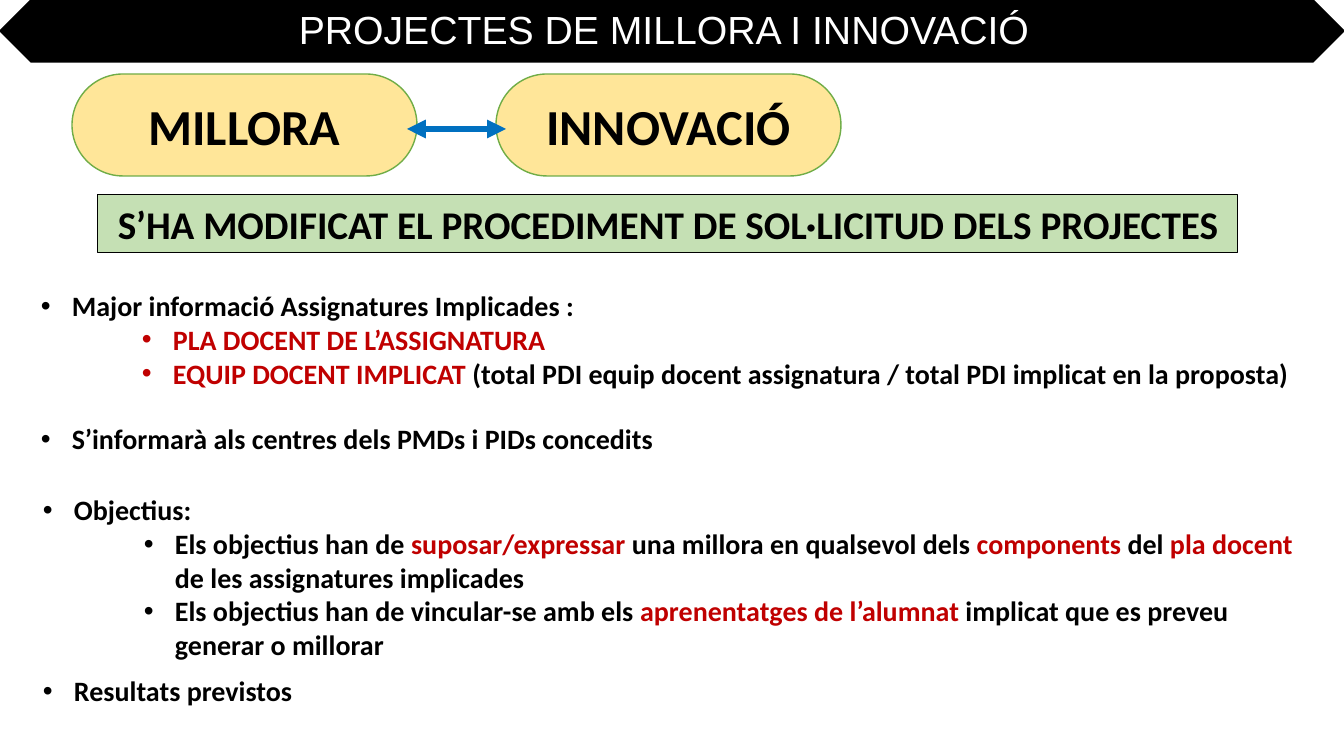
from lxml.etree import SubElement
from pptx import Presentation
from pptx.dml.color import RGBColor
from pptx.enum.shapes import MSO_CONNECTOR, MSO_SHAPE
from pptx.enum.text import MSO_ANCHOR, PP_ALIGN
from pptx.oxml.ns import qn
from pptx.util import Pt

PX = 914400 / 100.8
THEME = {
    "black": RGBColor(0x00, 0x00, 0x00),
    "white": RGBColor(0xFF, 0xFF, 0xFF),
    "red": RGBColor(0xC0, 0x00, 0x00),
    "blue": RGBColor(0x00, 0x70, 0xC0),
    "yellow": RGBColor(0xFF, 0xE6, 0x99),
    "pale_green": RGBColor(0xC5, 0xE0, 0xB4),
    "green": RGBColor(0x70, 0xAD, 0x47),
    "title": Pt(28), "pill": Pt(36), "notice": Pt(28), "body": Pt(20),
    "title_font": "Arial", "body_font": "Calibri",
}


def px(*lengths):
    return [round(length * PX) for length in lengths]


def style_span(span, size, color, font="body_font", bold=True):
    span.font.size = THEME[size]
    span.font.color.rgb = THEME[color]
    span.font.name = THEME[font]
    span.font.bold = bold


deck = Presentation()
deck.slide_width, deck.slide_height = px(1344, 756)
page = deck.slides.add_slide(deck.slide_layouts[6])

# Banner, the two project types and the notice:
# preset, place, fill, line, line width, adjustments, text, size
panels = [
    (MSO_SHAPE.SNIP_2_DIAG_RECTANGLE, (0, 0, 1344, 62),
     "black", "black", 1, (0.5, 0.5), "", "title"),
    (MSO_SHAPE.ROUNDED_RECTANGLE, (72, 74, 345, 102),
     "yellow", "green", 1, (0.5,), "MILLORA", "pill"),
    (MSO_SHAPE.ROUNDED_RECTANGLE, (496, 74, 345, 102),
     "yellow", "green", 1, (0.5,), "INNOVACIÓ", "pill"),
    (MSO_SHAPE.RECTANGLE, (98, 195, 1140, 58),
     "pale_green", "black", 0.75, (),
     "S’HA MODIFICAT EL PROCEDIMENT DE SOL·LICITUD DELS PROJECTES", "notice"),
]
for preset, place, fill, line, width, adjustments, text, size in panels:
    panel = page.shapes.add_shape(preset, *px(*place))
    panel.shadow.inherit = False
    panel.fill.solid()
    panel.fill.fore_color.rgb = THEME[fill]
    panel.line.color.rgb = THEME[line]
    panel.line.width = Pt(width)
    for index, value in enumerate(adjustments):
        panel.adjustments[index] = value
    if text:
        panel.text_frame.text = text
        panel.text_frame.vertical_anchor = MSO_ANCHOR.MIDDLE
        para = panel.text_frame.paragraphs[0]
        para.alignment = PP_ALIGN.CENTER
        style_span(para.runs[0], size, "black")

# Title on the banner
title = page.shapes.add_textbox(*px(289, 0, 766, 57))
title.text_frame.word_wrap = True
title.text_frame.text = "PROJECTES DE MILLORA I INNOVACIÓ"
style_span(title.text_frame.paragraphs[0].runs[0],
           "title", "white", "title_font", False)

# Double arrow between the project types
arrow = page.shapes.add_connector(MSO_CONNECTOR.STRAIGHT, *px(407, 129, 506, 129))
arrow.line.color.rgb = THEME["blue"]
arrow.line.width = Pt(4.5)
for end in ("a:headEnd", "a:tailEnd"):
    SubElement(arrow.line._get_or_add_ln(), qn(end), type="triangle")
SubElement(arrow._element.spPr, qn("a:effectLst"))

# Bullet lists: place, then (level, text); words between asterisks are red
bullet_lists = [
    ((31, 284, 1280, 112), [
        (0, "Major informació Assignatures Implicades :"),
        (1, "*PLA DOCENT DE L’ASSIGNATURA*"),
        (1, "*EQUIP DOCENT IMPLICAT *(total PDI equip docent assignatura"
            " / total PDI implicat en la proposta)"),
    ]),
    ((31, 417, 1257, 44), [
        (0, "S’informarà als centres dels PMDs i PIDs concedits"),
    ]),
    ((33, 488, 1279, 179), [
        (0, "Objectius:"),
        (1, "Els objectius han de *suposar/expressar *una millora en qualsevol dels "
            "*components* del *pla docent *de les assignatures implicades"),
        (1, "Els objectius han de vincular-se amb els *aprenentatges de l’alumnat *"
            "implicat que es preveu generar o millorar"),
    ]),
    ((33, 669, 1279, 44), [
        (0, "Resultats previstos"),
    ]),
]
INDENT, LEVEL_STEP = px(31, 101)
for place, items in bullet_lists:
    frame = page.shapes.add_textbox(*px(*place)).text_frame
    frame.word_wrap = True
    for number, (level, text) in enumerate(items):
        para = frame.add_paragraph() if number else frame.paragraphs[0]
        para.level = level
        properties = para._p.get_or_add_pPr()
        properties.set("marL", str(INDENT + level * LEVEL_STEP))
        properties.set("indent", str(-INDENT))
        SubElement(properties, qn("a:buFont"), typeface="Arial")
        SubElement(properties, qn("a:buChar"), char="•")
        for index, part in enumerate(text.split("*")):
            if part:
                span = para.add_run()
                span.text = part
                style_span(span, "body", "red" if index % 2 else "black")

deck.save("out.pptx")
